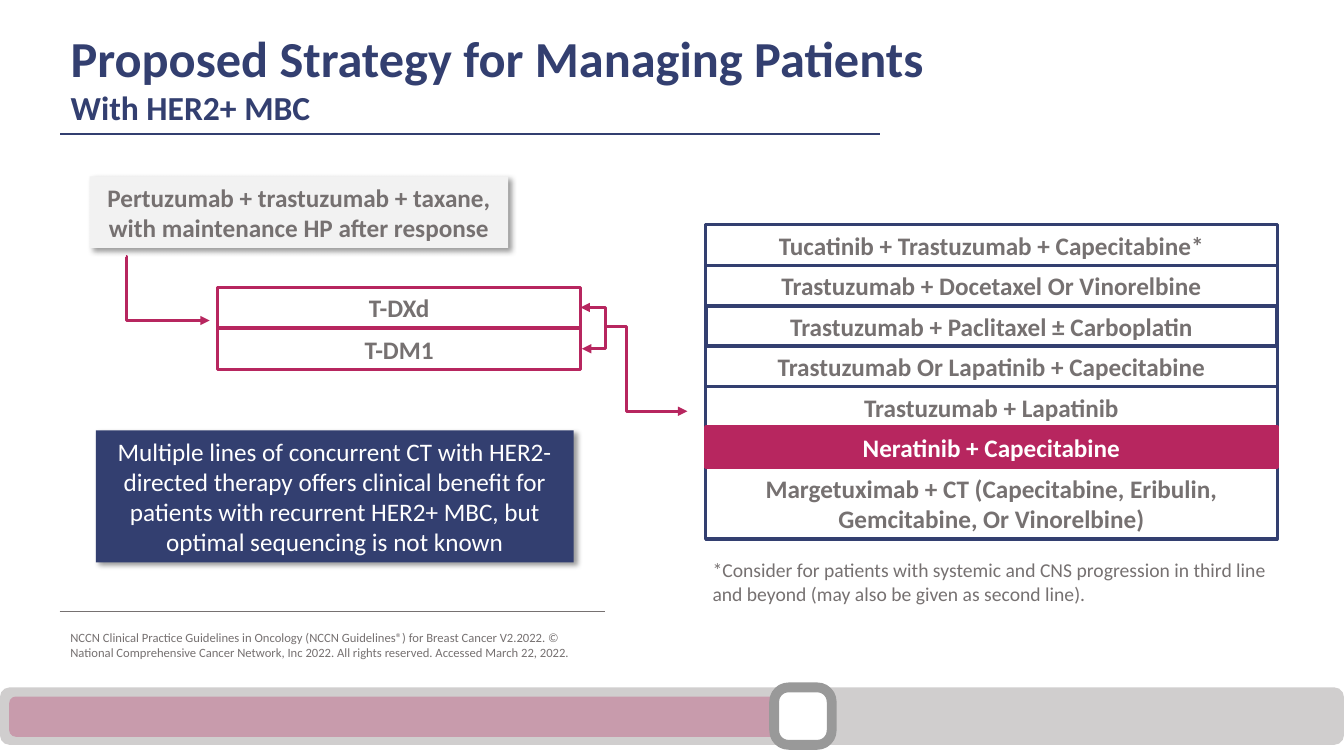
import pptx
import pptx.util
import pptx.dml.color
import pptx.enum.shapes
import pptx.enum.text
import pptx.oxml.ns
import lxml.etree

WIDE, HIGH = 13.333, 7.5
HUES = {"navy": "333F70", "pink": "B7265F", "gray": "767171", "white": "FFFFFF",
        "pale": "F2F2F2", "track": "D0CECE", "ring": "999999"}
FONT = "Calibri"
RECT = pptx.enum.shapes.MSO_SHAPE.RECTANGLE
ROUND = pptx.enum.shapes.MSO_SHAPE.ROUNDED_RECTANGLE
LEFT = pptx.enum.text.PP_ALIGN.LEFT
MID = pptx.enum.text.PP_ALIGN.CENTER

# Options on the right: one row each
OPTIONS = ["Tucatinib + Trastuzumab + Capecitabine*",
           "Trastuzumab + Docetaxel Or Vinorelbine",
           "Trastuzumab + Paclitaxel ± Carboplatin",
           "Trastuzumab Or Lapatinib + Capecitabine",
           "Trastuzumab + Lapatinib",
           "Neratinib + Capecitabine",
           "Margetuximab + CT (Capecitabine, Eribulin, Gemcitabine, Or Vinorelbine)"]
THICK, KEY, LAST = 2, 5, 6


def hue(name):
    return pptx.dml.color.RGBColor.from_string(HUES[name])


def across(share):
    """Percent of the slide's width."""
    return pptx.util.Inches(WIDE * share / 100)


def down(share):
    """Percent of the slide's height."""
    return pptx.util.Inches(HIGH * share / 100)


def area(x, y, w, h):
    return across(x), down(y), across(w), down(h)


def sub(parent, tag, **attrs):
    node = lxml.etree.SubElement(parent, pptx.oxml.ns.qn("a:" + tag))
    for key, val in attrs.items():
        node.set(key, str(val))
    return node


def write(para, text, size, color, bold=False, align=LEFT):
    para.alignment = align
    run = para.add_run()
    run.text = text
    font = run.font
    font.name, font.size, font.bold = FONT, pptx.util.Pt(size), bold
    font.color.rgb = hue(color)


def shade(shape):
    effects = shape._element.spPr.find(pptx.oxml.ns.qn("a:effectLst"))
    outer = sub(effects, "outerShdw", blurRad=pptx.util.Pt(4), dist=pptx.util.Pt(3),
                dir=45 * 60000, algn="tl", rotWithShape=0)
    sub(sub(outer, "srgbClr", val="000000"), "alpha", val=40000)


def block(slide, place, fill=None, line=None, width=2.25, form=RECT):
    shape = slide.shapes.add_shape(form, *area(*place))
    if fill:
        shape.fill.solid()
        shape.fill.fore_color.rgb = hue(fill)
    else:
        shape.fill.background()
    if line:
        shape.line.color.rgb = hue(line)
        shape.line.width = pptx.util.Pt(width)
    else:
        shape.line.fill.background()
    shape.shadow.inherit = False
    return shape


def panel(slide, place, text, color="gray", bold=True, **look):
    shape = block(slide, place, **look)
    frame = shape.text_frame
    frame.word_wrap = True
    frame.vertical_anchor = pptx.enum.text.MSO_ANCHOR.MIDDLE
    write(frame.paragraphs[0], text, 18, color, bold, MID)
    return shape


def note(slide, place, text, size):
    frame = slide.shapes.add_textbox(*area(*place)).text_frame
    frame.word_wrap = True
    write(frame.paragraphs[0], text, size, "gray")


def link(slide, kind, start, end, color, width):
    line = slide.shapes.add_connector(kind, across(start[0]), down(start[1]),
                                      across(end[0]), down(end[1]))
    line.line.color.rgb = hue(color)
    line.line.width = pptx.util.Pt(width)
    sub(line._element.spPr, "effectLst")
    return line


def rule(slide, left, right, y, color, width):
    link(slide, pptx.enum.shapes.MSO_CONNECTOR.STRAIGHT, (left, y), (right, y), color, width)


def elbow(slide, start, turn, end, both=False):
    """Bent arrow whose upright part stands at turn."""
    line = link(slide, pptx.enum.shapes.MSO_CONNECTOR.ELBOW, start, end, "pink", 2.25)
    bend = (turn - start[0]) / (end[0] - start[0])
    props = line._element.spPr
    geom = props.find(pptx.oxml.ns.qn("a:prstGeom"))
    guides = geom.find(pptx.oxml.ns.qn("a:avLst"))
    if guides is None:
        guides = sub(geom, "avLst")
    sub(guides, "gd", name="adj1", fmla=f"val {round(bend * 100000)}")
    stroke = props.find(pptx.oxml.ns.qn("a:ln"))
    if both:
        sub(stroke, "headEnd", type="triangle")
    sub(stroke, "tailEnd", type="triangle")


def head(slide):
    title = slide.shapes.title
    title.left, title.top, title.width, title.height = area(4.5, 2.8, 84.7, 14.8)
    frame = title.text_frame
    frame.word_wrap = True
    frame.auto_size = pptx.enum.text.MSO_AUTO_SIZE.NONE
    frame.vertical_anchor = pptx.enum.text.MSO_ANCHOR.MIDDLE
    write(frame.paragraphs[0], "Proposed Strategy for Managing Patients", 36, "navy", True)
    write(frame.add_paragraph(), "With HER2+ MBC", 24, "navy", True)
    rule(slide, 4.5, 65.48, 17.73, "navy", 1.5)


def options(slide):
    # The key row goes last, so that it lies over its neighbours
    for row in sorted(range(len(OPTIONS)), key=lambda n: n == KEY):
        place = (52.5, 29.73 + 5.35 * row, 42.53, 9.47 if row == LAST else 5.39)
        if row == KEY:
            panel(slide, place, OPTIONS[row], "white", fill="pink", line="pink")
        else:
            panel(slide, place, OPTIONS[row], line="navy", width=3 if row == THICK else 2.25)


def slider(slide):
    block(slide, (0, 90.93, 100, 7.6), fill="track", form=ROUND)
    done = block(slide, (0.68, 92.13, 59.1, 5.33), fill="pink", form=ROUND)
    tint = done._element.spPr.find(".//" + pptx.oxml.ns.qn("a:srgbClr"))
    sub(tint, "alpha", val=30000)
    knob = block(slide, (57.6, 90.93, 4.28, 7.6), "white", "ring", 7, ROUND)
    knob.adjustments[0] = 0.25


def main():
    deck = pptx.Presentation()
    deck.slide_width = pptx.util.Inches(WIDE)
    deck.slide_height = pptx.util.Inches(HIGH)
    slide = deck.slides.add_slide(deck.slide_layouts[5])
    head(slide)

    # Therapy steps on the left
    shade(panel(slide, (6.68, 23.33, 31.13, 9.47),
                "Pertuzumab + trastuzumab + taxane, with maintenance HP after response",
                fill="pale"))
    for row, drug in enumerate(["T-DXd", "T-DM1"]):
        panel(slide, (16.2, 38 + 5.47 * row, 27, 5.39), drug, line="pink")
    shade(panel(slide, (7.13, 56.93, 35.55, 17.47),
                "Multiple lines of concurrent CT with HER2-directed therapy offers clinical "
                "benefit for patients with recurrent HER2+ MBC, but optimal sequencing is "
                "not known", "white", False, fill="navy"))

    options(slide)

    # Arrows between the steps
    elbow(slide, (9.35, 34), 9.42, (15.6, 42.4))
    elbow(slide, (43.2, 40.67), 45.08, (43.3, 46.13), both=True)
    elbow(slide, (45.15, 43.2), 46.65, (51.15, 54.4))

    # Footnote and source
    note(slide, (52.28, 73.2, 42.75, 7.6),
         "*Consider for patients with systemic and CNS progression in third line and beyond "
         "(may also be given as second line).", 14)
    rule(slide, 4.43, 45, 80.93, "gray", 0.75)
    note(slide, (4.5, 82.67, 40.5, 5.33),
         "NCCN Clinical Practice Guidelines in Oncology (NCCN Guidelines®) for Breast Cancer "
         "V2.2022. © National Comprehensive Cancer Network, Inc 2022. All rights reserved. "
         "Accessed March 22, 2022.", 9)

    slider(slide)
    deck.save("out.pptx")


if __name__ == "__main__":
    main()
